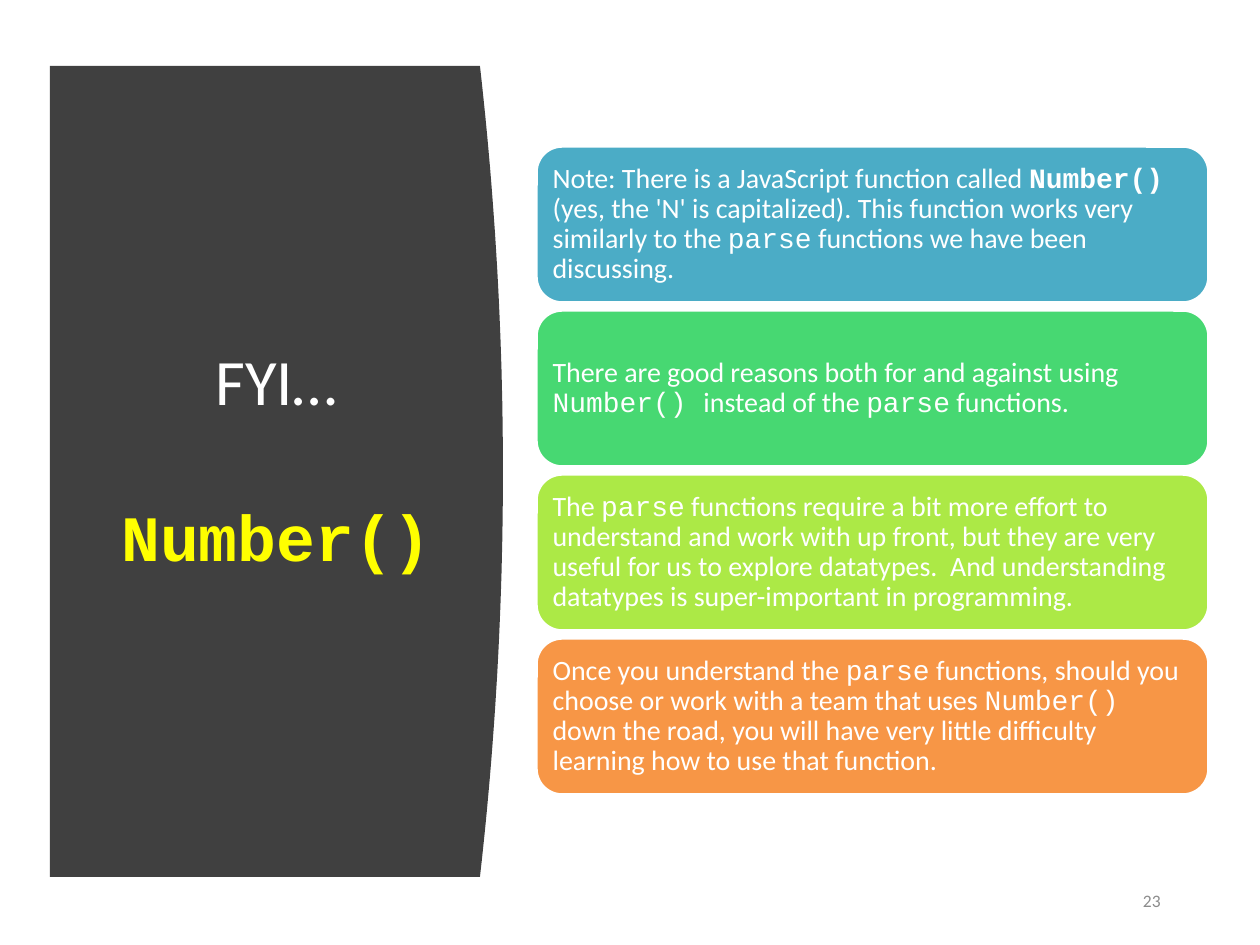
import pptx
import pptx.util
import pptx.dml.color
import pptx.enum.shapes
import pptx.enum.text

# Content: each run is (text, style)
HEADING = [("FYI…", "heading"), ("Number()", "function")]
NOTES = [
    ("blue", [
        ("Note: There is a JavaScript function called ", "body"),
        ("Number() ", "bold code"),
        ("(yes, the 'N' is capitalized). This function works very similarly to the ", "body"),
        ("parse", "code"),
        (" functions we have been discussing.", "body")]),
    ("green", [
        ("There are good reasons both for and against using ", "body"),
        ("Number() ", "code"),
        ("instead of the ", "body"),
        ("parse", "code"),
        (" functions.", "body")]),
    ("lime", [
        ("The ", "body"),
        ("parse", "code"),
        (" functions require a bit more effort to understand and work with up front, "
         "but they are very useful for us to explore datatypes.  "
         "And understanding datatypes is super-important in programming.", "body")]),
    ("orange", [
        ("Once you understand the ", "body"),
        ("parse", "code"),
        (" functions, should you choose or work with a team that uses ", "body"),
        ("Number() ", "code"),
        ("down the road, you will have very little difficulty learning "
         "how to use that function.", "body")]),
]
PAGE_NUMBER = "23"

COLORS = {"panel": "404040", "white": "FFFFFF", "yellow": "FFFF00", "grey": "8C8C8C",
          "blue": "4BACC6", "green": "47D872", "lime": "ACE946", "orange": "F79646"}
# Style: font, points, colour, bold
STYLES = {
    "heading": ("Calibri", 37, "white", False),
    "function": ("Courier New", 37, "yellow", True),
    "body": ("Calibri", 16, "white", False),
    "code": ("Courier New", 16, "white", False),
    "bold code": ("Courier New", 16, "white", True),
    "page": ("Calibri", 10, "grey", False),
}

# Layout in px
PANEL_LEFT, PANEL_TOP, PANEL_RIGHT, PANEL_BOTTOM = 50, 66, 480, 877
PANEL_BULGE, CURVE_STEPS = 23, 48
HEADING_BOX = (100, 305, 353, 305)
NOTE_LEFT, NOTE_TOP, NOTE_WIDTH, NOTE_HEIGHT, NOTE_GAP = 536, 146, 673, 157, 7
NOTE_INSET = 9
PAGE_BOX = (1109, 876, 64, 50)

ALIGN = pptx.enum.text.PP_ALIGN
MIDDLE = pptx.enum.text.MSO_ANCHOR.MIDDLE
Pt = pptx.util.Pt


def px(length):
    return pptx.util.Emu(round(length * 914400 / 126))


def color(name):
    return pptx.dml.color.RGBColor.from_string(COLORS[name])


def add_runs(paragraph, runs):
    for text, style in runs:
        run = paragraph.add_run()
        run.text = text
        family, size, ink, bold = STYLES[style]
        run.font.name, run.font.size, run.font.bold = family, Pt(size), bold
        run.font.color.rgb = color(ink)


def paint(shape, fill):
    shape.shadow.inherit = False
    shape.fill.solid()
    shape.fill.fore_color.rgb = color(fill)


def add_panel(slide):
    height = PANEL_BOTTOM - PANEL_TOP
    # The right edge bows out as a parabola
    edge = []
    for step in range(CURVE_STEPS + 1):
        t = step / CURVE_STEPS
        edge.append((px(PANEL_RIGHT + PANEL_BULGE * 4 * t * (1 - t)),
                     px(PANEL_TOP + height * t)))
    outline = slide.shapes.build_freeform(px(PANEL_LEFT), px(PANEL_TOP))
    outline.add_line_segments(edge + [(px(PANEL_LEFT), px(PANEL_BOTTOM))], close=True)
    panel = outline.convert_to_shape()
    paint(panel, "panel")
    panel.line.fill.background()
    return panel


def add_heading(slide):
    heading = slide.shapes.title
    heading.left, heading.top, heading.width, heading.height = map(px, HEADING_BOX)
    frame = heading.text_frame
    frame.word_wrap = True
    frame.auto_size = pptx.enum.text.MSO_AUTO_SIZE.NONE
    frame.vertical_anchor = MIDDLE
    for index, run in enumerate(HEADING):
        line = frame.add_paragraph() if index else frame.paragraphs[0]
        line.alignment = ALIGN.CENTER
        line.space_before = Pt(45 * index)
        add_runs(line, [run])
    return heading


def add_note(slide, top, fill, runs):
    note = slide.shapes.add_shape(
        pptx.enum.shapes.MSO_SHAPE.ROUNDED_RECTANGLE,
        px(NOTE_LEFT), px(top), px(NOTE_WIDTH), px(NOTE_HEIGHT))
    paint(note, fill)
    note.line.color.rgb = color("white")
    note.line.width = Pt(2)
    frame = note.text_frame
    frame.word_wrap = True
    frame.vertical_anchor = MIDDLE
    frame.margin_left = frame.margin_right = px(NOTE_INSET)
    frame.margin_top = frame.margin_bottom = px(NOTE_INSET)
    paragraph = frame.paragraphs[0]
    paragraph.alignment = ALIGN.LEFT
    paragraph.line_spacing = 0.9
    add_runs(paragraph, runs)


def add_page_number(slide):
    frame = slide.shapes.add_textbox(*map(px, PAGE_BOX)).text_frame
    frame.word_wrap = True
    frame.vertical_anchor = MIDDLE
    paragraph = frame.paragraphs[0]
    paragraph.alignment = ALIGN.RIGHT
    paragraph.space_after = Pt(6)
    add_runs(paragraph, [(PAGE_NUMBER, "page")])


def main():
    deck = pptx.Presentation()
    deck.slide_width, deck.slide_height = px(1260), px(945)
    slide = deck.slides.add_slide(deck.slide_layouts[5])

    # Dark panel behind the heading
    panel = add_panel(slide)
    heading = add_heading(slide)
    heading.element.addprevious(panel.element)

    add_page_number(slide)

    # Stack of notes
    for row, (fill, runs) in enumerate(NOTES):
        add_note(slide, NOTE_TOP + row * (NOTE_HEIGHT + NOTE_GAP), fill, runs)

    deck.save("out.pptx")


if __name__ == "__main__":
    main()
